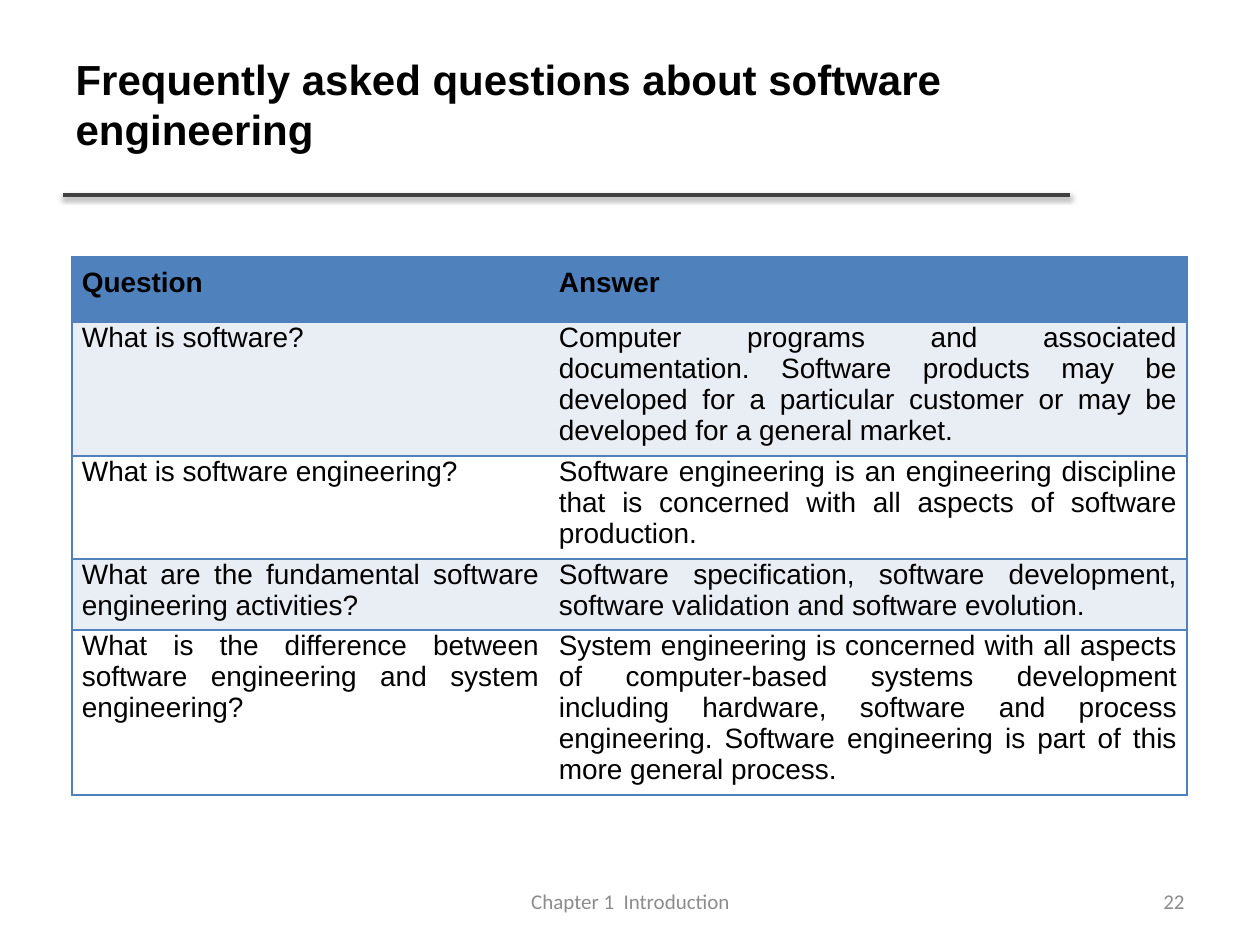
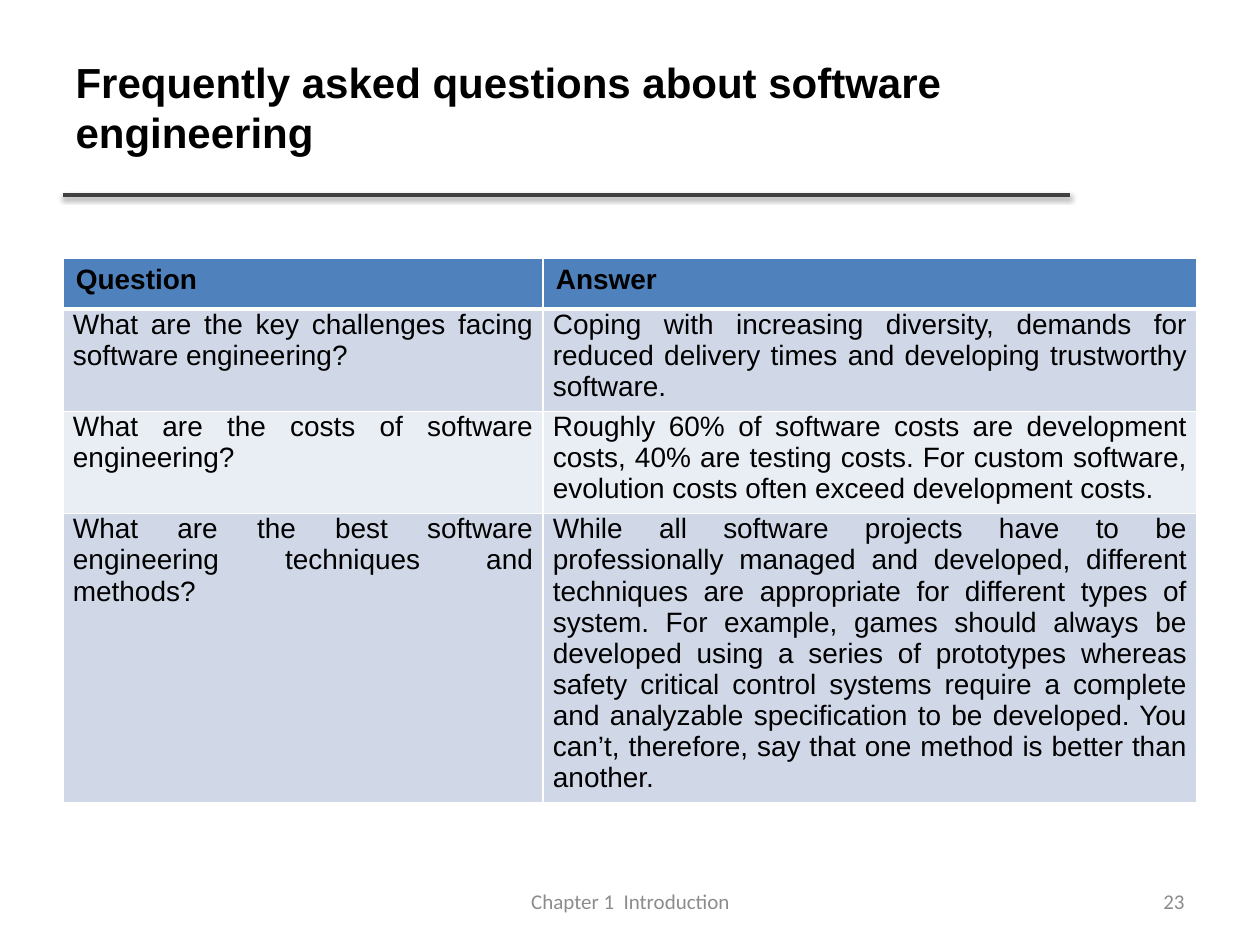
from dataclasses import dataclass

import pptx
import pptx.dml.color
import pptx.enum.shapes
import pptx.enum.text
import pptx.oxml
import pptx.oxml.ns
import pptx.util

PX_PER_INCH = 126
TITLE_ONLY = 5
ALIGN = pptx.enum.text.PP_ALIGN
MIDDLE = pptx.enum.text.MSO_ANCHOR.MIDDLE
DRAWING_NS = pptx.oxml.ns.nsdecls("a")


@dataclass(frozen=True)
class Theme:
    body_font: str = "Arial"
    footer_font: str = "Calibri"
    title_size: int = 24
    table_size: int = 16
    footer_size: int = 12
    ink: str = "000000"
    muted: str = "8C8C8C"
    rule: str = "404040"
    accent: str = "4F81BD"
    band_dark: str = "D0D8E8"
    band_light: str = "E9EDF4"
    white: str = "FFFFFF"


@dataclass(frozen=True)
class TableStyle:
    bands: tuple
    border: str
    inner_vertical: bool
    header_rule: int
    header_insets: tuple
    header_align: object


THEME = Theme()
BODY_INSETS = (10, 0, 10, 9)
OUTLINED = TableStyle((THEME.band_light, THEME.white), THEME.accent, False, 1,
                      (10, 10, 10, 10), ALIGN.JUSTIFY)
BANDED = TableStyle((THEME.band_dark, THEME.band_light), THEME.white, True, 3,
                    (13, 6, 13, 6), ALIGN.LEFT)

TITLE = "Frequently asked questions about software engineering"
HEADER = ("Question", "Answer")
BASICS = [
    HEADER,
    ("What is software?",
     "Computer programs and associated documentation. Software products may be "
     "developed for a particular customer or may be developed for a general market."),
    ("What is software engineering?",
     "Software engineering is an engineering discipline that is concerned with all "
     "aspects of software production."),
    ("What are the fundamental software engineering activities?",
     "Software specification, software development, software validation and "
     "software evolution."),
    ("What is the difference between software engineering and system engineering?",
     "System engineering is concerned with all aspects of computer-based systems "
     "development including hardware, software and process engineering. Software "
     "engineering is part of this more general process."),
]
PRACTICE = [
    HEADER,
    ("What are the key challenges facing software engineering?",
     "Coping with increasing diversity, demands for reduced delivery times and "
     "developing trustworthy software."),
    ("What are the costs of software engineering?",
     "Roughly 60% of software costs are development costs, 40% are testing costs. "
     "For custom software, evolution costs often exceed development costs."),
    ("What are the best software engineering techniques and methods?",
     "While all software projects have to be professionally managed and developed, "
     "different techniques are appropriate for different types of system. For "
     "example, games should always be developed using a series of prototypes whereas "
     "safety critical control systems require a complete and analyzable specification "
     "to be developed. You can’t, therefore, say that one method is better than "
     "another."),
]


def px(length):
    return pptx.util.Emu(round(length * 914400 / PX_PER_INCH))


def color(value):
    return pptx.dml.color.RGBColor.from_string(value)


def write(frame, text, size=THEME.table_size, font=THEME.body_font, ink=THEME.ink,
          bold=False, align=ALIGN.LEFT):
    frame.word_wrap = True
    paragraph = frame.paragraphs[0]
    paragraph.alignment = align
    run = paragraph.add_run()
    run.text = text
    run.font.size = pptx.util.Pt(size)
    run.font.name = font
    run.font.bold = bold
    run.font.color.rgb = color(ink)


def place(shape, box):
    shape.left, shape.top, shape.width, shape.height = map(px, box)


def add_title(slide, box, bottom_inset):
    title = slide.shapes.title
    place(title, box)
    frame = title.text_frame
    frame.auto_size = pptx.enum.text.MSO_AUTO_SIZE.NONE
    frame.vertical_anchor = MIDDLE
    frame.margin_bottom = px(bottom_inset)
    write(frame, TITLE, size=THEME.title_size, bold=True)


def add_title_rule(slide):
    rule = slide.shapes.add_connector(pptx.enum.shapes.MSO_CONNECTOR.STRAIGHT,
                                      px(63), px(195), px(1070), px(195))
    rule.line.color.rgb = color(THEME.rule)
    rule.line.width = pptx.util.Pt(2)
    shadow = (f'<a:effectLst {DRAWING_NS}><a:outerShdw blurRad="39370" dist="20320" '
              f'dir="5400000" rotWithShape="0"><a:srgbClr val="{THEME.ink}">'
              '<a:alpha val="38000"/></a:srgbClr></a:outerShdw></a:effectLst>')
    rule._element.spPr.append(pptx.oxml.parse_xml(shadow))


def add_footer(slide, text, box, align):
    frame = slide.shapes.add_textbox(*map(px, box)).text_frame
    frame.vertical_anchor = MIDDLE
    write(frame, text, size=THEME.footer_size, font=THEME.footer_font,
          ink=THEME.muted, align=align)


def set_borders(cell, border, widths):
    properties = cell._tc.get_or_add_tcPr()
    for side in "LRTB":
        width = widths[side]
        fill = (f'<a:solidFill><a:srgbClr val="{border}"/></a:solidFill>'
                if width else "<a:noFill/>")
        properties.append(pptx.oxml.parse_xml(
            f'<a:ln{side} {DRAWING_NS} w="{width * 12700}">{fill}</a:ln{side}>'))


def format_cell(cell, text, row, column, style):
    header = row == 0
    set_borders(cell, style.border, {
        "L": int(column == 0 or style.inner_vertical),
        "R": int(column == 1 or style.inner_vertical),
        "T": style.header_rule if row == 1 else 1,
        "B": style.header_rule if header else 1,
    })
    cell.fill.solid()
    cell.fill.fore_color.rgb = color(THEME.accent if header else style.bands[(row - 1) % 2])
    insets = style.header_insets if header else BODY_INSETS
    cell.margin_left, cell.margin_top, cell.margin_right, cell.margin_bottom = map(px, insets)
    write(cell.text_frame, text, bold=header,
          align=style.header_align if header else ALIGN.JUSTIFY)


def add_question_table(slide, rows, left, top, widths, heights, style):
    table = slide.shapes.add_table(len(rows), len(widths), px(left), px(top),
                                   px(sum(widths)), px(sum(heights))).table
    table.first_row = True
    table.horz_banding = False
    for column, width in zip(table.columns, widths):
        column.width = px(width)
    for row, height in zip(table.rows, heights):
        row.height = px(height)
    for row, texts in enumerate(rows):
        for column, text in enumerate(texts):
            format_cell(table.cell(row, column), text, row, column, style)


def add_faq_slide(presentation, number, title_box, title_bottom_inset, **table):
    slide = presentation.slides.add_slide(presentation.slide_layouts[TITLE_ONLY])
    add_title_rule(slide)
    add_title(slide, title_box, title_bottom_inset)
    add_question_table(slide, **table)
    add_footer(slide, "Chapter 1  Introduction", (431, 876, 399, 50), ALIGN.CENTER)
    add_footer(slide, str(number), (903, 876, 294, 50), ALIGN.RIGHT)


def main():
    presentation = pptx.Presentation()
    presentation.slide_width = px(1260)
    presentation.slide_height = px(945)
    add_faq_slide(presentation, 22, (63, 59, 1060, 136), 53, rows=BASICS,
                  left=72, top=257, widths=(477, 638),
                  heights=(65, 134, 103, 71, 165), style=OUTLINED)
    add_faq_slide(presentation, 23, (63, 28, 1006, 157), 6, rows=PRACTICE,
                  left=63, top=258, widths=(480, 654),
                  heights=(51, 102, 102, 289), style=BANDED)
    presentation.save("out.pptx")


if __name__ == "__main__":
    main()
